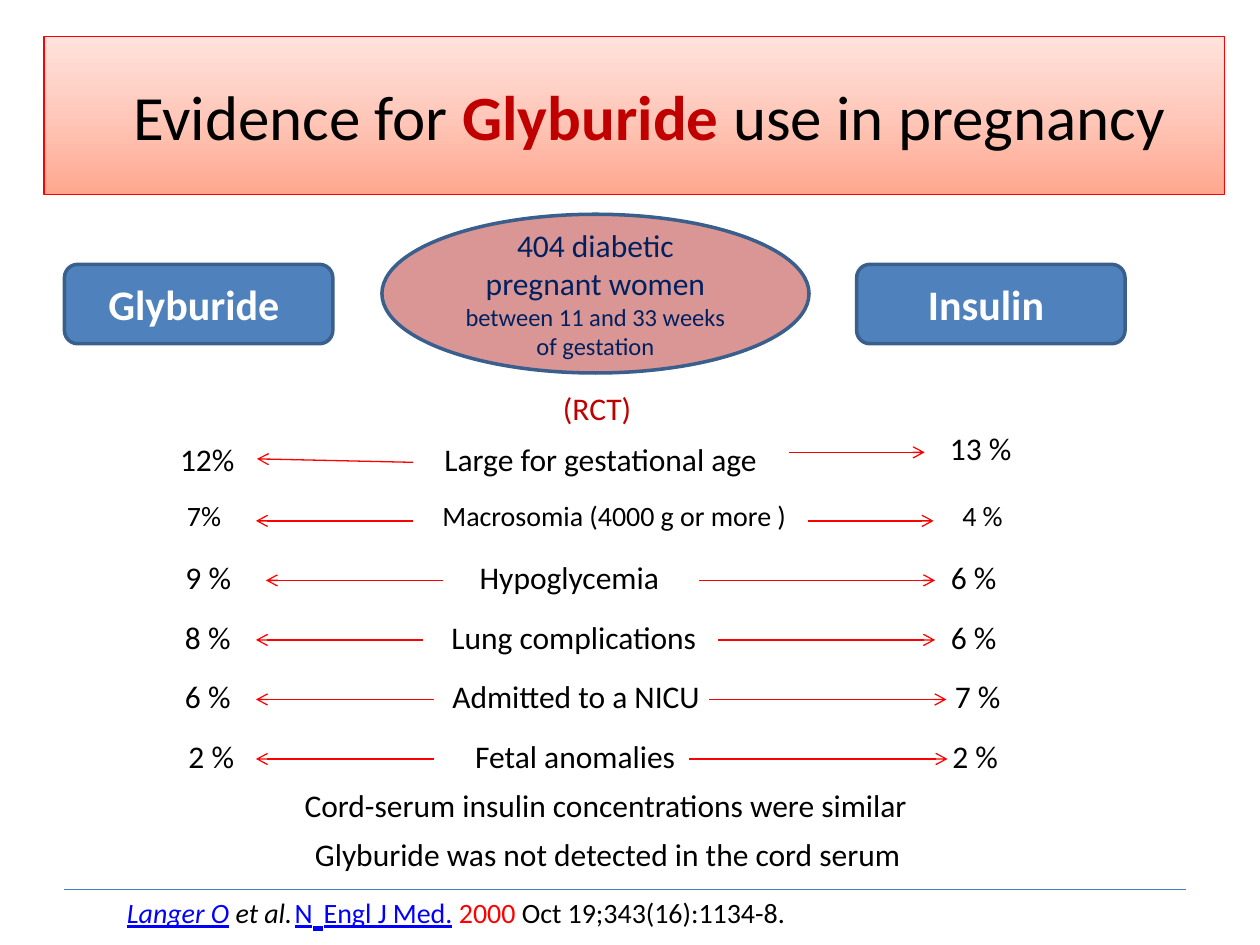
import copy
from dataclasses import dataclass

import lxml.etree
import pptx
import pptx.dml.color
import pptx.enum.shapes
import pptx.enum.text
import pptx.oxml.ns
import pptx.util

Cm = pptx.util.Cm
Pt = pptx.util.Pt
qn = pptx.oxml.ns.qn
SHAPE = pptx.enum.shapes.MSO_SHAPE
ALIGN = pptx.enum.text.PP_ALIGN
ANCHOR = pptx.enum.text.MSO_ANCHOR


@dataclass(frozen=True)
class Theme:
    font: str = "Calibri"
    black: str = "000000"
    white: str = "FFFFFF"
    red: str = "FF0000"
    dark_red: str = "C00000"
    navy: str = "002060"
    link: str = "0000FF"
    pill: str = "4F81BD"
    outline: str = "3A5F8C"
    ellipse: str = "D99694"
    rule: str = "4B7EBC"
    banner: tuple = ((0, "FFA78E"), (0.5, "FFC8BA"), (1, "FFE3DD"))
    title: int = 36
    arm: int = 24
    body: int = 18
    small: int = 16
    note: int = 14
    wide_space: int = 28
    thin: float = 0.75
    thick: float = 2


T = Theme()
INSET = 0.25  # default side inset of a text box, cm


@dataclass(frozen=True)
class Run:
    text: str
    size: int = T.body
    color: str = T.black
    bold: bool = False
    italic: bool = False
    underline: bool = False


@dataclass(frozen=True)
class Box:
    left: float
    top: float
    width: float
    height: float = 1.02

    def lengths(self) -> list:
        return [Cm(v) for v in (self.left, self.top, self.width, self.height)]


@dataclass(frozen=True)
class Outcome:
    cells: tuple    # glyburide, outcome, insulin
    stops: tuple    # where each cell starts
    left: float
    width: float
    to_left: tuple  # arrow start and end
    to_right: tuple
    size: int = T.body


def rgb(color: str):
    return pptx.dml.color.RGBColor.from_string(color)


def add_runs(p, runs: list) -> None:
    for item in runs:
        r = p.add_run()
        r.text = item.text
        f = r.font
        f.name, f.size, f.color.rgb = T.font, Pt(item.size), rgb(item.color)
        f.bold, f.italic, f.underline = item.bold, item.italic, item.underline


def add_label(s, box: Box, runs: list, wrap: bool = False):
    tf = s.shapes.add_textbox(*box.lengths()).text_frame
    tf.word_wrap = wrap
    add_runs(tf.paragraphs[0], runs)
    return tf.paragraphs[0]


def add_panel(s, kind, box: Box, fill: str, line: str, width: float, paragraphs: list):
    sp = s.shapes.add_shape(kind, *box.lengths())
    sp.shadow.inherit = False
    sp.fill.solid()
    sp.fill.fore_color.rgb = rgb(fill)
    sp.line.color.rgb = rgb(line)
    sp.line.width = Pt(width)
    tf = sp.text_frame
    tf.word_wrap = True
    tf.vertical_anchor = ANCHOR.MIDDLE
    for i, runs in enumerate(paragraphs):
        p = tf.add_paragraph() if i else tf.paragraphs[0]
        p.alignment = ALIGN.CENTER
        add_runs(p, runs)
    return sp


def add_line(s, start: tuple, end: tuple, color: str, arrow: bool = True) -> None:
    line = s.shapes.add_connector(pptx.enum.shapes.MSO_CONNECTOR.STRAIGHT,
                                  *[Cm(v) for v in start + end])
    line.line.color.rgb = rgb(color)
    line.line.width = Pt(T.thin)
    if arrow:
        lxml.etree.SubElement(line.line._get_or_add_ln(), qn("a:tailEnd"), type="arrow")
    lxml.etree.SubElement(line._element.spPr, qn("a:effectLst"))


def add_outcome(s, row: Outcome, top: float, arrow_y: float) -> None:
    p = add_label(s, Box(row.left, top, row.width), [], wrap=True)
    tabs = lxml.etree.SubElement(p._p.get_or_add_pPr(), qn("a:tabLst"))
    for stop in row.stops:
        lxml.etree.SubElement(tabs, qn("a:tab"), algn="l",
                              pos=str(int(Cm(stop - row.left - INSET))))
    add_runs(p, [Run("\t" + cell, row.size) for cell in row.cells])
    for start, end in (row.to_left, row.to_right):
        add_line(s, (start, arrow_y), (end, arrow_y), T.red)


def add_title(s) -> None:
    sp = add_panel(s, SHAPE.RECTANGLE, Box(0.89, 0.74, 23.8, 3.18), T.white, T.red, T.thin, [[
        Run("Evidence for ", T.title),
        Run("Glyburide ", T.title, T.dark_red, bold=True),
        Run("use in pregnancy", T.title)]])
    sp.text_frame.margin_left = Cm(0.84)
    sp.fill.gradient()
    sp.fill.gradient_angle = 90
    stops = sp._element.spPr.find(".//" + qn("a:gsLst"))
    stops.append(copy.deepcopy(stops[0]))
    for stop, (position, color) in zip(sp.fill.gradient_stops, T.banner):
        stop.position = position
        stop.color.rgb = rgb(color)


OUTCOMES = [
    Outcome(("7%", "Macrosomia (4000 g or more )", "4 %"), (3.77, 8.92, 19.4),
            2.77, 20.83, (8.33, 5.16), (16.28, 18.82), T.small),
    Outcome(("9 %", "Hypoglycemia", "6 %"), (3.74, 9.67, 19.17),
            3.38, 18.72, (8.94, 5.36), (14.1, 18.85)),
    Outcome(("8 %", "Lung complications", "6 %"), (3.73, 9.1, 19.17),
            2.77, 19.13, (8.53, 5.16), (14.48, 18.85)),
    Outcome(("6 %", "Admitted to a NICU", "7 %"), (3.73, 9.12, 19.25),
            3.38, 21.62, (8.74, 5.16), (14.3, 19.08)),
    Outcome(("2 %", "Fetal anomalies", "2 %"), (3.8, 9.58, 19.2),
            3.38, 18.72, (8.74, 5.16), (13.89, 19.1)),
]

LABELS = [
    (Box(11.1, 7.72, 2.06), Run("(RCT)", color=T.dark_red)),
    (Box(3.38, 8.74, 1.8), Run("12%")),
    (Box(8.71, 8.74, 6.88), Run("Large for gestational age")),
    (Box(18.9, 8.53, 1.9), Run("13 %")),
    (Box(5.89, 15.72, 12.73), Run("Cord-serum insulin concentrations were similar")),
    (Box(6.1, 16.71, 12.52), Run("Glyburide was not detected in the cord serum")),
]


def main() -> None:
    prs = pptx.Presentation()
    prs.slide_width, prs.slide_height = Cm(25.4), Cm(19.05)
    s = prs.slides.add_slide(prs.slide_layouts[6])

    # Title, study population and the two arms
    add_title(s)
    add_panel(s, SHAPE.OVAL, Box(7.7, 4.32, 8.61, 3.2), T.ellipse, T.outline, T.thick, [
        [Run("404 diabetic pregnant women", T.body, T.navy)],
        [Run("between 11 and 33 weeks of gestation", T.note, T.navy)]])
    for left, name in ((1.3, "Glyburide "), (17.27, "Insulin ")):
        add_panel(s, SHAPE.ROUNDED_RECTANGLE, Box(left, 5.33, 5.41, 1.6), T.pill, T.outline,
                  T.thick, [[Run(name, T.arm, T.white, bold=True)]])

    # Outcomes compared between the arms
    for box, run in LABELS:
        add_label(s, box, [run])
    add_line(s, (8.33, 9.32), (5.18, 9.25), T.red)
    add_line(s, (15.9, 9.12), (18.64, 9.12), T.red)
    for i, row in enumerate(OUTCOMES):
        add_outcome(s, row, 9.93 + 1.2 * i, 10.5 + 1.2 * i)

    # Citation
    add_line(s, (1.3, 17.93), (23.9, 17.93), T.rule, arrow=False)
    add_label(s, Box(2.31, 17.93, 3.89, 0.94), [
        Run("Langer O", T.small, T.link, italic=True, underline=True),
        Run(" et al.", T.small, italic=True)])
    add_label(s, Box(5.69, 17.5, 10.54, 1.45), [
        Run("N", T.small, T.link, underline=True),
        Run(" ", T.wide_space, T.link, underline=True),
        Run("Engl J Med.", T.small, T.link, underline=True),
        Run(" ", T.small),
        Run("2000", T.small, T.red),
        Run(" Oct 19;343(16):1134-8.", T.small)])

    prs.save("out.pptx")


if __name__ == "__main__":
    main()
